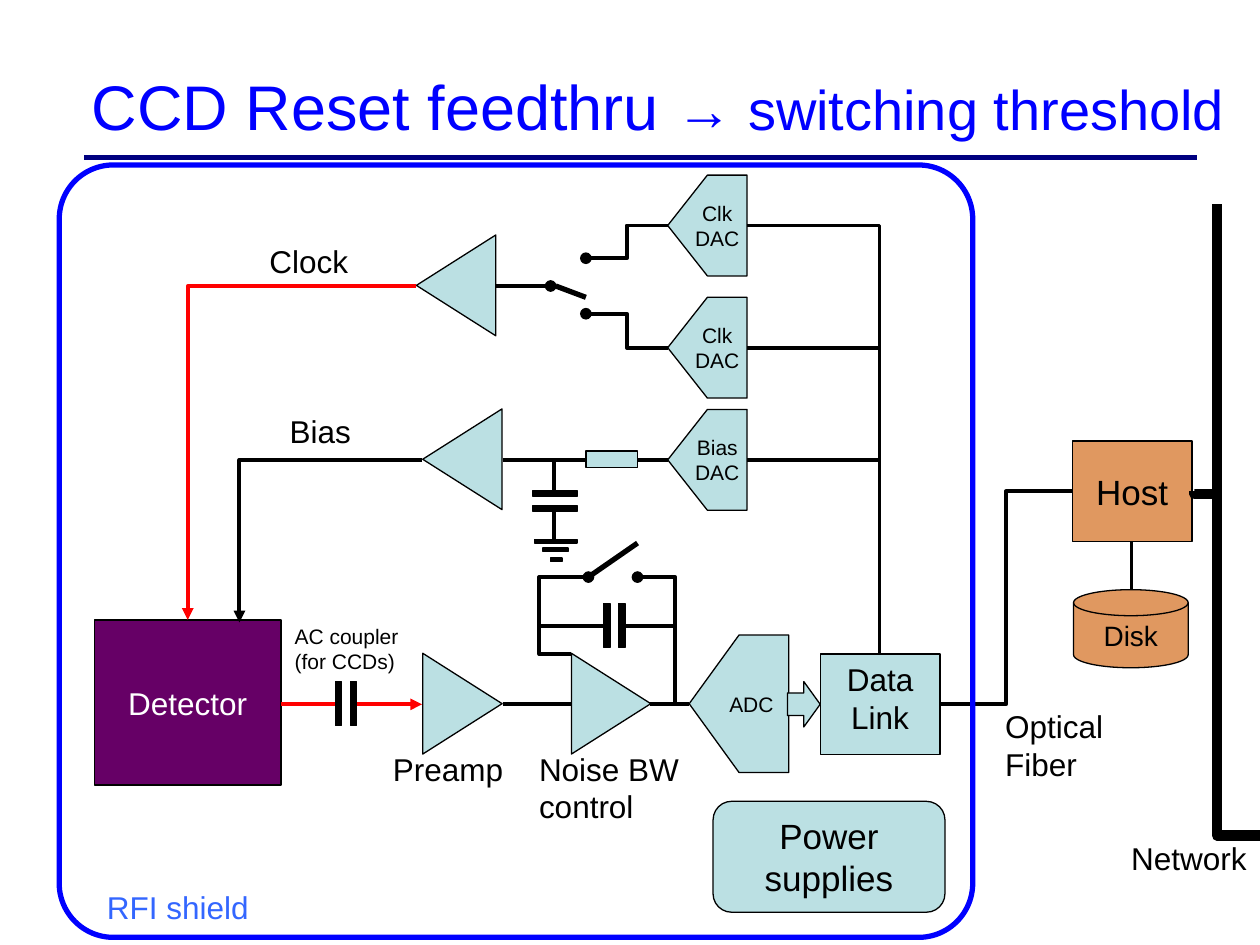
from lxml import etree
from pptx import Presentation
from pptx.dml.color import RGBColor
from pptx.enum import shapes, text
from pptx.oxml import ns
from pptx.util import Inches, Pt

KIND = shapes.MSO_SHAPE
BLACK, RED, BLUE, WHITE = "000000", "FF0000", "0000FF", "FFFFFF"
TEAL, ORANGE, PURPLE = "BBE0E3", "E09860", "660066"

TITLE = [("CCD Reset feedthru ", 36), ("→ switching threshold", 32)]
BLOCKS = [
    (KIND.RECTANGLE, (0.75, 4.92, 1.48, 1.31), PURPLE, "Detector", 18, WHITE),
    (KIND.RECTANGLE, (6.51, 5.19, 0.95, 0.8), TEAL, "Data Link", 18, BLACK),
    (KIND.RECTANGLE, (8.51, 3.5, 0.95, 0.8), ORANGE, "Host", 20, BLACK),
    (KIND.FLOWCHART_MAGNETIC_DISK, (8.52, 4.68, 0.91, 0.62), ORANGE, "Disk", 16, BLACK),
    (KIND.ROUNDED_RECTANGLE, (5.66, 6.36, 1.84, 0.88), TEAL, "Power supplies", 20, BLACK),
]
CONVERTERS = [
    ("Clk DAC", (5.3, 1.39, 0.63, 0.8)),
    ("Clk DAC", (5.3, 2.36, 0.63, 0.8)),
    ("Bias DAC", (5.3, 3.25, 0.63, 0.8)),
    ("ADC", (5.47, 5.04, 0.79, 1.09)),
]
AMPLIFIERS = [(3.22, 1.95, 270), (3.27, 3.33, 270), (3.27, 5.27, 90), (4.45, 5.27, 90)]
FILTER_PLATES = [(4.23, 3.89), (4.23, 4.01)]
UPRIGHT_PLATES = [(4.76, 4.94), (4.64, 4.94), (2.63, 5.56), (2.51, 5.56)]
GROUND_BARS = [(4.24, 4.28, 0.34), (4.31, 4.35, 0.2), (4.37, 4.43, 0.09)]

STRAIGHT_WIRES = [
    ((2.23, 5.59), (2.66, 5.59), RED, 2.25, None),
    ((3.35, 5.59), (2.83, 5.59), RED, 2.25, "triangle"),
    ((3.99, 5.59), (4.53, 5.59), BLACK, 2.25, None),
    ((5.16, 5.59), (5.47, 5.59), BLACK, 2.25, None),
    ((3.99, 3.65), (4.65, 3.65), BLACK, 2.25, None),
    ((5.06, 3.65), (5.3, 3.65), BLACK, 2.25, None),
    ((4.4, 3.65), (4.4, 3.89), BLACK, 2.25, None),
    ((4.4, 4.28), (4.4, 4.06), BLACK, 2.25, None),
    ((8.98, 4.68), (8.98, 4.3), BLACK, 2.25, None),
    ((4.37, 2.27), (3.93, 2.27), BLACK, 2.25, "oval"),
    ((4.41, 2.27), (4.65, 2.36), BLACK, 3, None),
    ((4.67, 4.58), (5.06, 4.31), BLACK, 3, None),
]
ELBOW_WIRES = [
    ((7.46, 5.59), (8.51, 3.9), BLACK, 2.25, None),
    ((4.65, 2.49), (5.3, 2.76), BLACK, 2.25, "oval"),
    ((4.65, 2.05), (5.3, 1.79), BLACK, 2.25, "oval"),
]
BENT_WIRES = [
    ([(6.98, 5.19), (6.98, y), (5.93, y)], BLACK, 2.25, None) for y in (3.65, 2.76, 1.79)
] + [
    ([(1.49, 4.92), (1.49, 2.27), (3.3, 2.27)], RED, 2.25, "triangle"),
    ([(1.9, 4.94), (1.9, 3.65), (3.35, 3.65)], BLACK, 2.25, "triangle"),
    ([(4.96, 4.97), (5.36, 4.97), (5.36, 5.59), (5.16, 5.59)], BLACK, 2.25, None),
    ([(4.53, 5.19), (4.28, 5.19), (4.28, 4.97), (4.79, 4.97)], BLACK, 2.25, None),
    ([(5.06, 4.58), (5.36, 4.58), (5.36, 4.97)], BLACK, 2.25, "oval"),
    ([(4.67, 4.58), (4.28, 4.58), (4.28, 4.97)], BLACK, 2.25, "oval"),
    ([(9.48, 3.9), (9.48, 3.92), (9.66, 3.92), (9.66, 1.62)], BLACK, 6, None),
    ([(10, 6.63), (9.66, 6.63), (9.66, 3.55)], BLACK, 6, None),
]
LABELS = [
    ("Clock", (2.04, 1.87, 0.89, 0.4), 18, BLACK),
    ("Bias", (2.2, 3.22, 0.89, 0.4), 18, BLACK),
    ("Preamp", (3.02, 5.9, 1.19, 0.4), 18, BLACK),
    ("Noise BW control", (4.18, 5.9, 1.5, 0.71), 18, BLACK),
    ("Optical Fiber", (7.88, 5.56, 1, 0.71), 18, BLACK),
    ("AC coupler (for CCDs)", (2.24, 4.9, 1.19, 0.5), 12, BLACK),
    ("Network", (8.88, 6.61, 1.16, 0.4), 18, BLACK),
    ("RFI shield", (0.75, 7, 1.91, 0.4), 18, "3366FF"),
]


def color(value):
    return RGBColor.from_string(value)


def format_run(run, size, font_color):
    run.font.name = "Arial"
    run.font.size = Pt(size)
    run.font.color.rgb = color(font_color)


def write(shape, words, size, font_color, align):
    frame = shape.text_frame
    frame.word_wrap = True
    frame.text = words
    frame.paragraphs[0].alignment = align
    format_run(frame.paragraphs[0].runs[0], size, font_color)


def add_block(slide, kind, box, fill, rotation=0):
    shape = slide.shapes.add_shape(kind, *map(Inches, box))
    shape.shadow.inherit = False
    shape.rotation = rotation
    shape.fill.solid()
    shape.fill.fore_color.rgb = color(fill)
    shape.line.color.rgb = color(BLACK)
    shape.line.width = Pt(0.75)
    return shape


def style_wire(wire, line_color, width, head):
    wire.line.color.rgb = color(line_color)
    wire.line.width = Pt(width)
    if head:
        etree.SubElement(wire.line._get_or_add_ln(), ns.qn("a:headEnd"), type=head)


def add_wire(slide, kind, start, end, line_color, width, head):
    wire = slide.shapes.add_connector(kind, *map(Inches, start + end))
    style_wire(wire, line_color, width, head)
    etree.SubElement(wire._element.spPr, ns.qn("a:effectLst"))


def add_bent_wire(slide, points, line_color, width, head):
    corners = [(Inches(x), Inches(y)) for x, y in points]
    builder = slide.shapes.build_freeform(*corners[0], scale=1.0)
    builder.add_line_segments(corners[1:], close=False)
    wire = builder.convert_to_shape()
    wire.fill.background()
    style_wire(wire, line_color, width, head)
    wire.shadow.inherit = False


def add_title(slide):
    box = slide.shapes.add_textbox(*map(Inches, (0.63, 0.42, 9.37, 0.83)))
    box.text_frame.word_wrap = True
    box.text_frame.vertical_anchor = text.MSO_ANCHOR.MIDDLE
    for words, size in TITLE:
        run = box.text_frame.paragraphs[0].add_run()
        run.text = words
        format_run(run, size, BLUE)


def add_blocks(slide):
    center, middle = text.PP_ALIGN.CENTER, text.MSO_ANCHOR.MIDDLE
    for kind, box, fill, words, size, font_color in BLOCKS:
        shape = add_block(slide, kind, box, fill)
        write(shape, words, size, font_color, center)
        top = words == "Data Link"
        shape.text_frame.vertical_anchor = text.MSO_ANCHOR.TOP if top else middle
    for words, box in CONVERTERS:
        shape = add_block(slide, KIND.PENTAGON, box, TEAL)
        shape._element.spPr.xfrm.set("flipH", "1")
        write(shape, words, 12, BLACK, center)
        shape.text_frame.vertical_anchor = middle
        shape.text_frame.margin_left = shape.text_frame.margin_right = 0
    for left, top, rotation in AMPLIFIERS:
        add_block(slide, KIND.ISOSCELES_TRIANGLE, (left, top, 0.8, 0.63), TEAL, rotation)
    add_block(slide, KIND.RIGHT_ARROW, (6.25, 5.41, 0.26, 0.36), TEAL)


def add_wiring(slide):
    for wire in STRAIGHT_WIRES:
        add_wire(slide, shapes.MSO_CONNECTOR.STRAIGHT, *wire)
    for wire in ELBOW_WIRES:
        add_wire(slide, shapes.MSO_CONNECTOR.ELBOW, *wire)
    for wire in BENT_WIRES:
        add_bent_wire(slide, *wire)
    add_block(slide, KIND.RECTANGLE, (4.65, 3.58, 0.41, 0.13), TEAL)
    for plates, rotation in ((FILTER_PLATES, 0), (UPRIGHT_PLATES, 90)):
        for left, top in plates:
            add_block(slide, KIND.RECTANGLE, (left, top, 0.35, 0.05), BLACK, rotation)
    for left, top, width in GROUND_BARS:
        add_block(slide, KIND.RECTANGLE, (left, top, width, 0.03), BLACK)


def add_shield(slide):
    shield = add_block(slide, KIND.ROUNDED_RECTANGLE, (0.47, 1.31, 7.25, 6.13), WHITE)
    shield.adjustments[0] = 0.07
    shield.fill.background()
    shield.line.color.rgb = color(BLUE)
    shield.line.width = Pt(3)


def main():
    presentation = Presentation()
    presentation.slide_width, presentation.slide_height = Inches(10), Inches(7.5)
    slide = presentation.slides.add_slide(presentation.slide_layouts[6])
    add_wire(slide, shapes.MSO_CONNECTOR.STRAIGHT, (0.67, 1.25), (9.5, 1.25), "000080", 2.5, None)
    add_title(slide)
    add_blocks(slide)
    add_wiring(slide)
    add_shield(slide)
    for words, box, size, font_color in LABELS:
        label = slide.shapes.add_textbox(*map(Inches, box))
        write(label, words, size, font_color, text.PP_ALIGN.LEFT)
    presentation.save("out.pptx")


if __name__ == "__main__":
    main()
